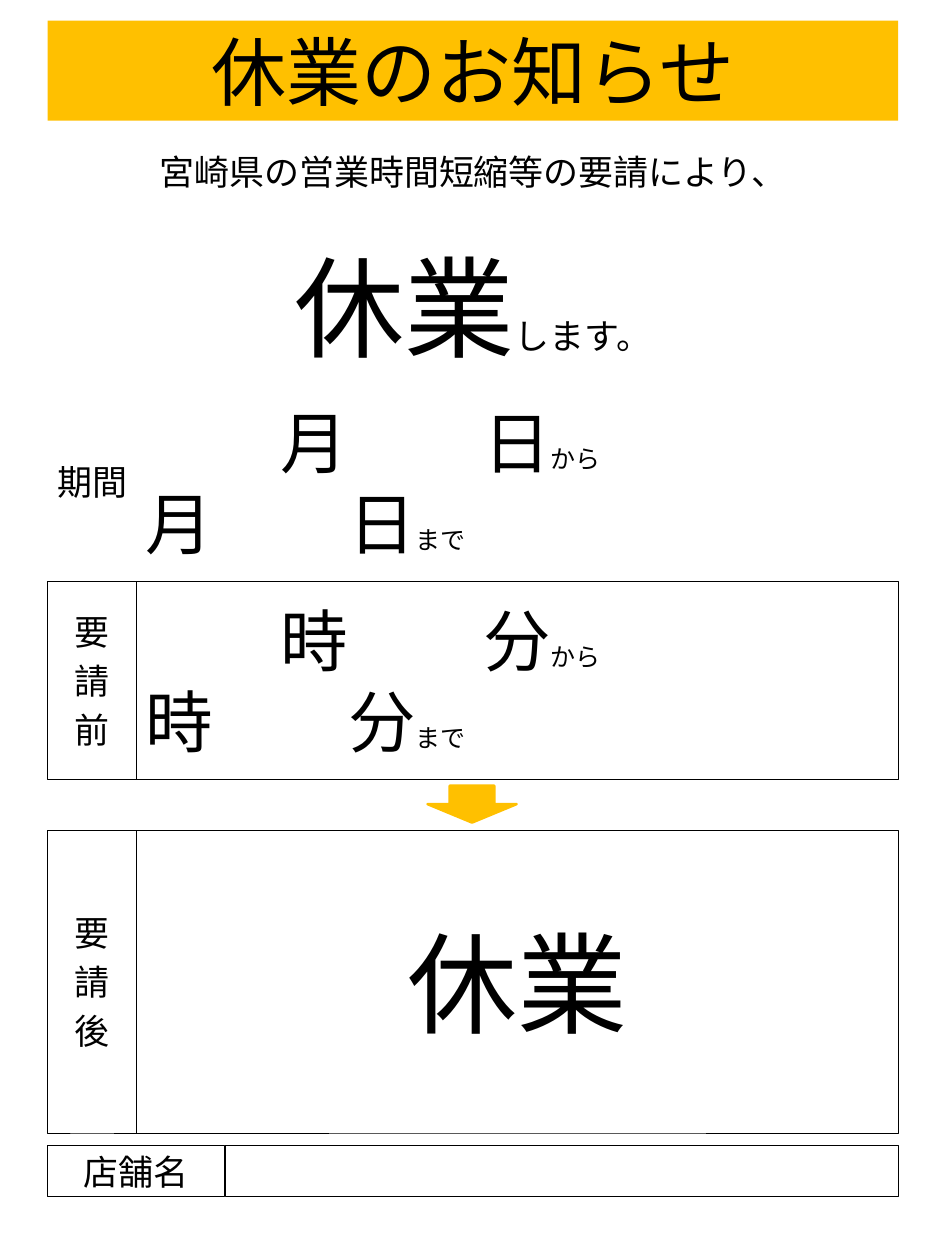
from dataclasses import dataclass
from typing import Optional

from lxml import etree
from pptx import Presentation
from pptx.dml.color import RGBColor
from pptx.enum.shapes import MSO_SHAPE
from pptx.enum.text import MSO_ANCHOR, PP_ALIGN
from pptx.oxml.ns import qn
from pptx.util import Inches, Pt

RECT = MSO_SHAPE.RECTANGLE
ARROW = MSO_SHAPE.DOWN_ARROW
CENTER = PP_ALIGN.CENTER
LEFT = PP_ALIGN.LEFT
MIDDLE = MSO_ANCHOR.MIDDLE


@dataclass(frozen=True)
class Theme:
    font: str = "Arial"
    ink: RGBColor = RGBColor(0, 0, 0)
    accent: RGBColor = RGBColor(0xFF, 0xC0, 0x00)
    title: int = 60
    hero: int = 88
    blank: int = 54
    body: int = 28
    small: int = 20
    border: float = 0.75


@dataclass(frozen=True)
class Run:
    text: str
    size: int


@dataclass(frozen=True)
class Line:
    runs: tuple[Run, ...]
    tabs: tuple[float, ...] = ()
    before: float = 0


@dataclass(frozen=True)
class Box:
    x: float
    y: float
    w: float
    h: float
    lines: tuple[Line, ...] = ()
    align: PP_ALIGN = CENTER
    fill: Optional[RGBColor] = None
    border: Optional[RGBColor] = None
    border_width: float = 0.75
    shape: Optional[MSO_SHAPE] = RECT
    side: float = 0.1


THEME = Theme()


def single(text: str, size: int) -> tuple[Line, ...]:
    return (Line((Run(text, size),)),)


def stacked(text: str) -> tuple[Line, ...]:
    gap = THEME.body * 0.2
    return tuple(Line((Run(c, THEME.body),), before=gap if i else 0)
                 for i, c in enumerate(text))


def blanks(first: str, second: str) -> tuple[Line, ...]:
    em = THEME.blank / 72
    start = Line((Run(f"\t{first}\t{second}", THEME.blank), Run("から", THEME.small)),
                 tabs=(2 * em, 5 * em))
    end = Line((Run(f"{first}\t{second}", THEME.blank), Run("まで", THEME.small)),
               tabs=(3 * em,))
    return start, end


def add_tabs(p, tabs: tuple[float, ...]) -> None:
    tab_list = etree.SubElement(p._p.get_or_add_pPr(), qn("a:tabLst"))
    for pos in tabs:
        etree.SubElement(tab_list, qn("a:tab"), pos=str(Inches(pos)), algn="l")


def write_lines(tf, box: Box) -> None:
    frame = {"word_wrap": True, "vertical_anchor": MIDDLE,
             "margin_left": Inches(box.side), "margin_right": Inches(box.side)}
    for name, value in frame.items():
        setattr(tf, name, value)
    for i, line in enumerate(box.lines):
        p = tf.add_paragraph() if i else tf.paragraphs[0]
        p.alignment = box.align
        if line.before:
            p.space_before = Pt(line.before)
        if line.tabs:
            add_tabs(p, line.tabs)
        for run in line.runs:
            r = p.add_run()
            r.text = run.text
            for name, value in {"name": THEME.font, "size": Pt(run.size)}.items():
                setattr(r.font, name, value)
            r.font.color.rgb = THEME.ink


def add_box(s, box: Box) -> None:
    place = [Inches(v) for v in (box.x, box.y, box.w, box.h)]
    if box.shape is None:
        sp = s.shapes.add_textbox(*place)
    else:
        sp = s.shapes.add_shape(box.shape, *place)
        sp.shadow.inherit = False
        if box.fill is None:
            sp.fill.background()
        else:
            sp.fill.solid()
            sp.fill.fore_color.rgb = box.fill
        if box.border is None:
            sp.line.fill.background()
        else:
            sp.line.color.rgb = box.border
            sp.line.width = Pt(box.border_width)
    if box.lines:
        write_lines(sp.text_frame, box)


def main() -> None:
    t = THEME
    left, width, label_w, store_w = 0.53, 9.45, 0.99, 1.97
    field_x, field_w = left + label_w, width - label_w
    before_y, before_h = 6.46, 2.2
    after_y, after_h = 9.23, 3.36
    store_y, store_h = 12.73, 0.57
    hero = (Line((Run("休業", t.hero), Run("します。", t.body))),)
    boxes = (
        Box(left, 0.23, width, 1.11, single("休業のお知らせ", t.title), fill=t.accent),
        Box(left, 1.29, width, 1.24,
            single("宮崎県の営業時間短縮等の要請により、", t.body), shape=None),
        Box(left, 2.54, width, 1.71, hero, shape=None),
        Box(field_x, 4.26, field_w, before_h, blanks("月", "日"), LEFT, shape=None),
        Box(field_x, before_y, field_w, before_h, blanks("時", "分"), LEFT, border=t.ink),
        Box(4.75, 8.73, 0.99, 0.41, fill=t.accent, border=t.accent,
            border_width=2, shape=ARROW),
        Box(field_x, after_y, field_w, after_h, single("休業", t.hero), border=t.ink),
        Box(left, store_y, store_w, store_h, single("店舗名", t.body), border=t.ink),
        Box(left, before_y, label_w, before_h, stacked("要請前"), border=t.ink),
        Box(left, after_y, label_w, after_h, stacked("要請後"), border=t.ink),
        Box(left, 5.07, label_w, 0.57, single("期間", t.body), shape=None, side=0),
        Box(left + store_w, store_y, width - store_w, store_h, border=t.ink),
    )
    prs = Presentation()
    prs.slide_width, prs.slide_height = Inches(10.5), Inches(14)
    s = prs.slides.add_slide(prs.slide_layouts[6])
    for box in boxes:
        add_box(s, box)
    prs.save("out.pptx")


if __name__ == "__main__":
    main()
